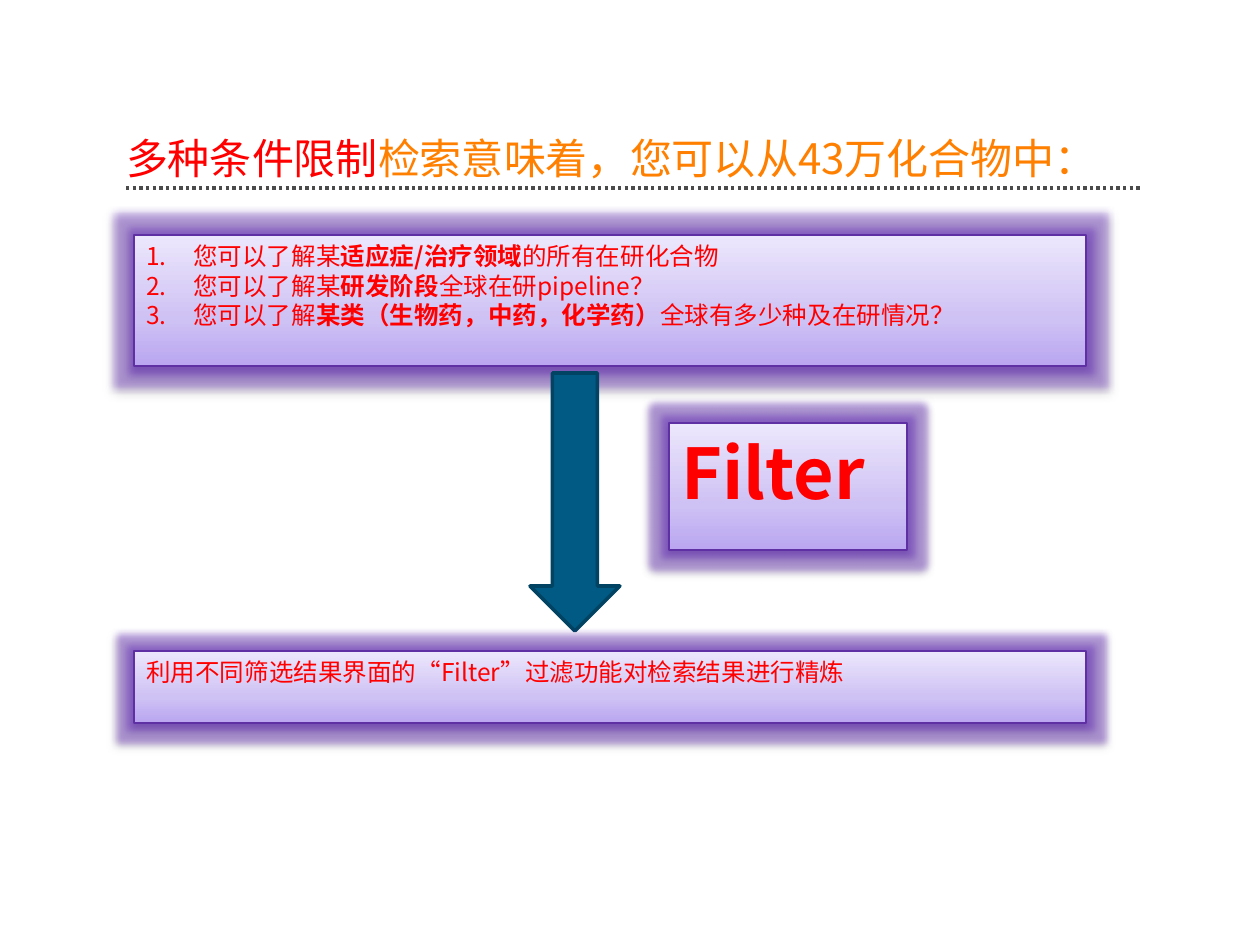
from dataclasses import dataclass

import lxml.etree
import pptx
import pptx.dml.color
import pptx.enum.dml
import pptx.enum.shapes
import pptx.enum.text
import pptx.oxml.ns
import pptx.util

EMU_PER_INCH = 914400
PX_PER_INCH = 126
FONT = "Noto Sans CJK SC"
HANGING_PX = 47
COLORS = {
    "red": "FF0000",
    "orange": "FF8000",
    "rule": "4B4B4B",
    "arrow": "005A84",
    "arrow_edge": "004362",
    "panel_edge": "5F30A3",
    "glow": "6529BE",
    "shadow": "000000",
    "panel_bottom": "BAA6F1",
    "panel_middle": "CEC1F4",
    "panel_top": "ECE7FC",
}
PANEL_STOPS = ((0, "panel_bottom"), (35, "panel_middle"), (100, "panel_top"))


@dataclass(frozen=True)
class Words:
    text: str
    bold: bool = False
    color: str = "red"


@dataclass(frozen=True)
class Panel:
    left: int
    top: int
    width: int
    height: int
    size: int
    lines: tuple[tuple[Words, ...], ...]
    numbered: bool = False


PANELS = (
    Panel(134, 235, 952, 131, 14, (
        (Words("您可以了解某"), Words("适应症/治疗领域", True), Words("的所有在研化合物")),
        (Words("您可以了解某"), Words("研发阶段", True), Words("全球在研pipeline？")),
        (Words("您可以了解"), Words("某类（生物药，中药，化学药）", True),
         Words("全球有多少种及在研情况？")),
    ), numbered=True),
    Panel(669, 423, 238, 127, 40, ((Words("Filter", True),),)),
    Panel(134, 651, 952, 72, 14, (
        (Words("利用不同筛选结果界面的“Filter”过滤功能对检索结果进行精炼"),),
    )),
)
HEADLINE = (
    Words("多种条件限制"),
    Words("检索意味着，您可以从43万化合物中：", color="orange"),
)


def px(length: int) -> pptx.util.Emu:
    return pptx.util.Emu(round(length * EMU_PER_INCH / PX_PER_INCH))


def rgb(name: str) -> pptx.dml.color.RGBColor:
    return pptx.dml.color.RGBColor.from_string(COLORS[name])


def add_child(parent, tag: str, **attributes):
    child = lxml.etree.SubElement(parent, pptx.oxml.ns.qn(tag))
    for key, value in attributes.items():
        child.set(key, str(value))
    return child


def add_color(parent, name: str, alpha: int = 100) -> None:
    color = add_child(parent, "a:srgbClr", val=COLORS[name])
    if alpha < 100:
        add_child(color, "a:alpha", val=alpha * 1000)


def add_words(paragraph, words: tuple[Words, ...], size: int) -> None:
    for part in words:
        run = paragraph.add_run()
        run.text = part.text
        run.font.size = pptx.util.Pt(size)
        run.font.bold = part.bold
        run.font.name = FONT
        run.font.color.rgb = rgb(part.color)
        add_child(run.font._element, "a:ea", typeface=FONT)


def draw_rule(slide) -> None:
    rule = slide.shapes.add_connector(
        pptx.enum.shapes.MSO_CONNECTOR.STRAIGHT, px(126), px(188), px(1142), px(188))
    rule.line.color.rgb = rgb("rule")
    rule.line.width = pptx.util.Pt(1.9)
    rule.line.dash_style = pptx.enum.dml.MSO_LINE.ROUND_DOT
    add_child(rule._element.spPr, "a:effectLst")


def draw_headline(slide) -> None:
    headline = slide.shapes.add_textbox(px(126), px(69), px(1016), px(115))
    frame = headline.text_frame
    frame.word_wrap = True
    frame.vertical_anchor = pptx.enum.text.MSO_ANCHOR.BOTTOM
    frame.margin_left = frame.margin_right = frame.margin_top = frame.margin_bottom = 0
    frame.paragraphs[0].line_spacing = 0.9
    add_words(frame.paragraphs[0], HEADLINE, 24)


def draw_arrow(slide) -> None:
    arrow = slide.shapes.add_shape(
        pptx.enum.shapes.MSO_SHAPE.DOWN_ARROW, px(530), px(373), px(90), px(258))
    arrow.shadow.inherit = False
    arrow.fill.solid()
    arrow.fill.fore_color.rgb = rgb("arrow")
    arrow.line.color.rgb = rgb("arrow_edge")
    arrow.line.width = pptx.util.Pt(2)


def style_panel(shape) -> None:
    shape.fill.gradient()
    shape.fill.gradient_angle = 90
    properties = shape._element.spPr
    stops = properties.find(".//" + pptx.oxml.ns.qn("a:gsLst"))
    for stop in list(stops):
        stops.remove(stop)
    for position, color in PANEL_STOPS:
        add_color(add_child(stops, "a:gs", pos=position * 1000), color)
    shape.line.color.rgb = rgb("panel_edge")
    shape.line.width = pptx.util.Pt(0.75)
    shape.shadow.inherit = False
    effects = properties.find(pptx.oxml.ns.qn("a:effectLst"))
    add_color(add_child(effects, "a:glow", rad=pptx.util.Pt(8)), "glow", 40)
    shadow = add_child(effects, "a:outerShdw", blurRad=pptx.util.Pt(3.1),
                       dist=pptx.util.Pt(1.6), dir=90 * 60000, rotWithShape=0)
    add_color(shadow, "shadow", 38)


def draw_panel(slide, panel: Panel) -> None:
    shape = slide.shapes.add_shape(
        pptx.enum.shapes.MSO_SHAPE.RECTANGLE,
        px(panel.left), px(panel.top), px(panel.width), px(panel.height))
    style_panel(shape)
    frame = shape.text_frame
    frame.word_wrap = True
    frame.auto_size = pptx.enum.text.MSO_AUTO_SIZE.SHAPE_TO_FIT_TEXT
    frame.vertical_anchor = pptx.enum.text.MSO_ANCHOR.TOP
    for index, line in enumerate(panel.lines):
        paragraph = frame.add_paragraph() if index else frame.paragraphs[0]
        paragraph.alignment = pptx.enum.text.PP_ALIGN.LEFT
        layout = paragraph._p.get_or_add_pPr()
        layout.set("marL", str(px(HANGING_PX)))
        layout.set("indent", str(-px(HANGING_PX)))
        if panel.numbered:
            add_color(add_child(layout, "a:buClr"), "red")
            add_child(layout, "a:buFont", typeface=FONT)
            add_child(layout, "a:buAutoNum", type="arabicPeriod")
        add_words(paragraph, line, panel.size)


def main() -> None:
    deck = pptx.Presentation()
    deck.slide_width = px(1260)
    deck.slide_height = px(945)
    slide = deck.slides.add_slide(deck.slide_layouts[6])
    draw_rule(slide)
    draw_headline(slide)
    conditions, filter_label, refinement = PANELS
    draw_panel(slide, conditions)
    draw_arrow(slide)
    draw_panel(slide, filter_label)
    draw_panel(slide, refinement)
    deck.save("out.pptx")


if __name__ == "__main__":
    main()
